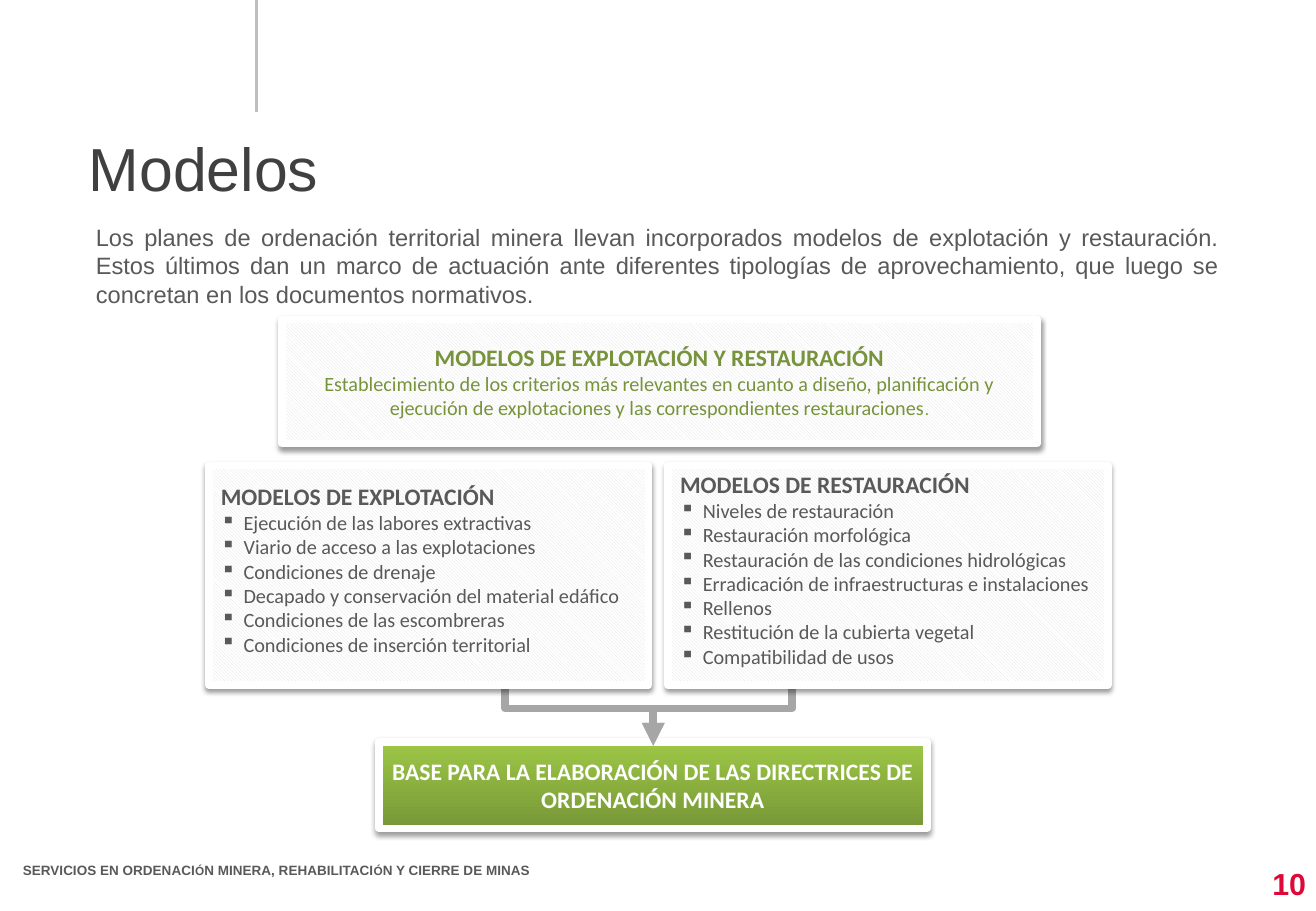
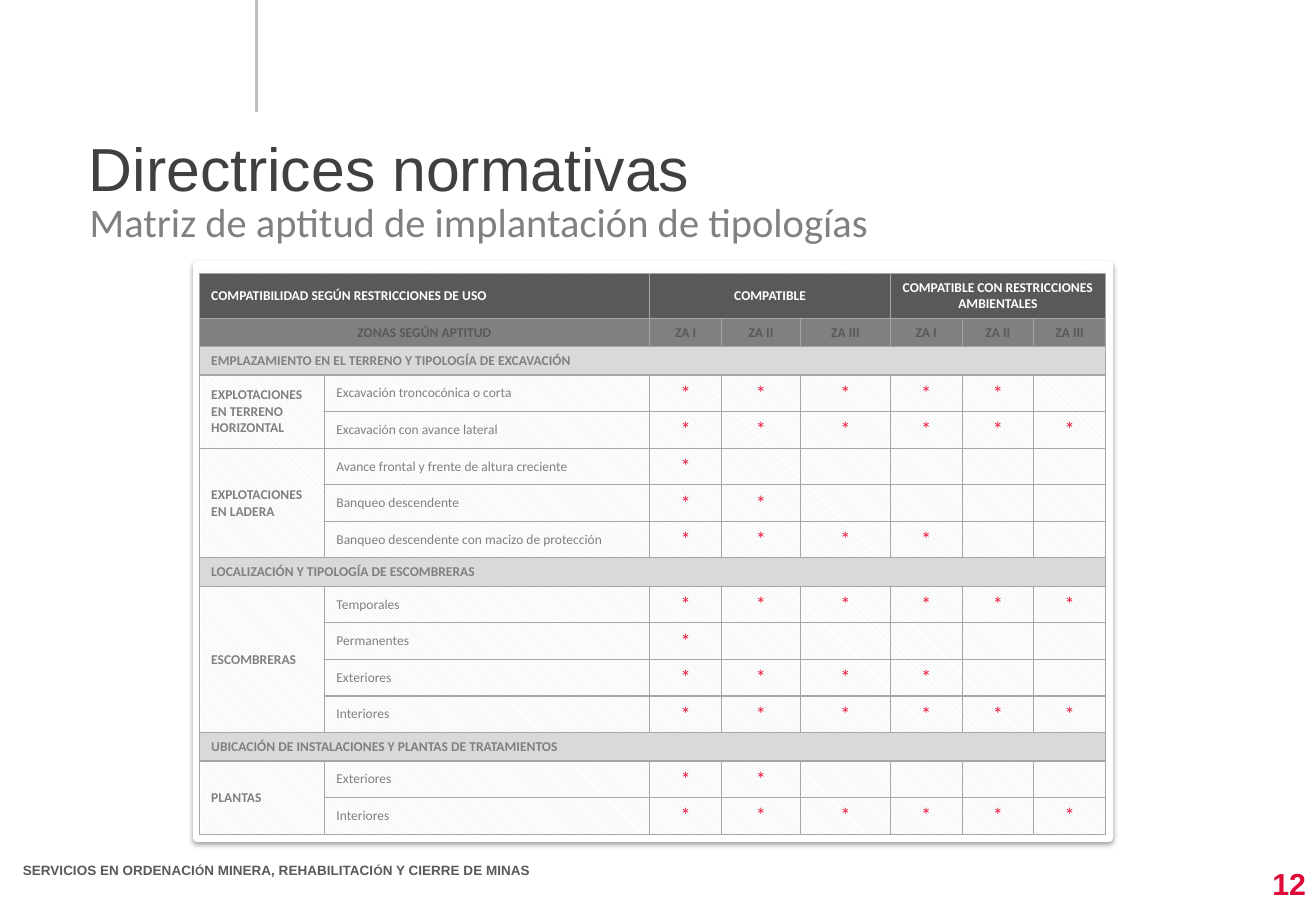
from dataclasses import dataclass, field

from lxml import etree
from pptx import Presentation
from pptx.dml.color import RGBColor
from pptx.enum.dml import MSO_PATTERN
from pptx.enum.shapes import MSO_CONNECTOR, MSO_SHAPE
from pptx.enum.text import MSO_ANCHOR, PP_ALIGN
from pptx.oxml.ns import qn
from pptx.util import Pt

LEFT, CENTER, RIGHT = PP_ALIGN.LEFT, PP_ALIGN.CENTER, PP_ALIGN.RIGHT
JUSTIFY = PP_ALIGN.JUSTIFY
TOP, MIDDLE = MSO_ANCHOR.TOP, MSO_ANCHOR.MIDDLE
HATCH = MSO_PATTERN.LIGHT_DOWNWARD_DIAGONAL
ROUNDED = MSO_SHAPE.ROUNDED_RECTANGLE
STRAIGHT, ELBOW = MSO_CONNECTOR.STRAIGHT, MSO_CONNECTOR.ELBOW

SLIDE_SIZE = 780, 540
BLANK_LAYOUT = 6


def style(font, size, color, bold=False):
    return {"name": font, "size": Pt(size), "bold": bold, "color": color}


@dataclass
class Theme:
    white: str = "FFFFFF"
    black: str = "000000"
    hatch: str = "E2E2E2"
    rule: str = "BFBFBF"
    arrow: str = "A6A6A6"
    dark: str = "595959"
    grey: str = "808080"
    light: str = "D9D9D9"
    gradient: tuple = ("779737", "9DC746")
    text: dict = field(default_factory=lambda: {
        "title": style("Arial", 36, "404040"),
        "subtitle": style("Calibri", 24, "808080"),
        "body": style("Arial", 14, "595959"),
        "footer": style("Arial", 8, "595959", True),
        "footer accent": style("Arial", 7, "595959", True),
        "number": style("Arial", 18, "DD0939", True),
        "green heading": style("Calibri", 14, "77933C", True),
        "green": style("Calibri", 12, "77933C"),
        "green stop": style("Calibri", 10, "77933C"),
        "heading": style("Calibri", 14, "595959", True),
        "item": style("Calibri", 12, "595959"),
        "base": style("Calibri", 14, "FFFFFF", True),
        "head cell": style("Calibri", 8, "FFFFFF", True),
        "zone cell": style("Calibri", 8, "595959", True),
        "group cell": style("Calibri", 8, "808080", True),
        "cell": style("Calibri", 8, "808080"),
        "mark": style("Calibri", 12, "EC1C3F"),
    })


@dataclass
class Para:
    """A paragraph: spans are (text, style name) pairs."""
    spans: list
    align: object = LEFT
    bullet: bool = False
    line_spacing: object = None


def child(parent, tag, **attributes):
    return etree.SubElement(parent, qn(tag), attributes)


def solid(parent, color):
    return child(child(parent, "a:solidFill"), "a:srgbClr", val=color)


class Builder:
    def __init__(self):
        self.theme = Theme()
        self.deck = Presentation()
        self.deck.slide_width, self.deck.slide_height = map(Pt, SLIDE_SIZE)
        self.page = None

    def new_page(self, title, number):
        """Start a slide with the shared rule, footer, title and number."""
        layout = self.deck.slide_layouts[BLANK_LAYOUT]
        self.page = self.deck.slides.add_slide(layout)
        footer = [("SERVICIOS EN ORDENACI", "footer"), ("Ó", "footer accent"),
                  ("N MINERA, REHABILITACI", "footer"), ("Ó", "footer accent"),
                  ("N Y CIERRE DE MINAS", "footer")]
        self.text((6.5, 508.3, 457, 19.4), [Para(footer, line_spacing=0.9)])
        rule = self.connector(STRAIGHT, 152, 0, 152, 66.2)
        rule.line.color.rgb = RGBColor.from_string(self.theme.rule)
        rule.line.width = Pt(1.5)
        self.text((52.6, 71.3, 680.4, 55.4), [Para([(title, "title")])],
                  anchor=MIDDLE, insets=(0, 0, 0, 0))
        self.text((718.6, 509.8, 62.6, 28),
                  [Para([(str(number), "number")], RIGHT)], anchor=MIDDLE)

    def fill_frame(self, frame, paras, anchor=TOP, insets=(7.2, 3.6, 7.2, 3.6)):
        sides = ("margin_left", "margin_top", "margin_right", "margin_bottom")
        settings = dict(zip(sides, map(Pt, insets)))
        settings.update(word_wrap=True, vertical_anchor=anchor)
        for name, value in settings.items():
            setattr(frame, name, value)
        for index, para in enumerate(paras):
            target = frame.add_paragraph() if index else frame.paragraphs[0]
            self.fill_paragraph(target, para)

    def fill_paragraph(self, target, para):
        target.alignment = para.align
        if para.line_spacing:
            target.line_spacing = para.line_spacing
        if para.bullet:
            properties = target._p.get_or_add_pPr()
            properties.set("marL", str(Pt(13.5)))
            properties.set("indent", str(-Pt(13.5)))
            child(properties, "a:buChar", char="▪")
        for text, style_name in para.spans:
            span = target.add_run()
            span.text = text
            for name, value in self.theme.text[style_name].items():
                if name == "color":
                    span.font.color.rgb = RGBColor.from_string(value)
                else:
                    setattr(span.font, name, value)

    def text(self, area, paras, **frame_format):
        box = self.page.shapes.add_textbox(*map(Pt, area))
        self.fill_frame(box.text_frame, paras, **frame_format)

    def card(self, area, paras=(), gradient=False, **frame_format):
        box = self.page.shapes.add_shape(ROUNDED, *map(Pt, area))
        box.adjustments[0] = 0
        if gradient:
            box.fill.gradient()
            box.fill.gradient_angle = 90
            for stop, color in zip(box.fill.gradient_stops, self.theme.gradient):
                stop.color.rgb = RGBColor.from_string(color)
        else:
            box.fill.patterned()
            box.fill.pattern = HATCH
            box.fill.fore_color.rgb = RGBColor.from_string(self.theme.hatch)
            box.fill.back_color.rgb = RGBColor.from_string(self.theme.white)
        box.line.color.rgb = RGBColor.from_string(self.theme.white)
        box.line.width = Pt(4.5)
        box.shadow.inherit = False
        effects = box._element.spPr.find(qn("a:effectLst"))
        shadow = child(effects, "a:outerShdw", blurRad=str(Pt(3.1)),
                       dist=str(Pt(1.7)), dir="5400000", rotWithShape="0")
        color = child(shadow, "a:srgbClr", val=self.theme.black)
        child(color, "a:alpha", val="38000")
        self.fill_frame(box.text_frame, paras, anchor=MIDDLE, **frame_format)

    def connector(self, kind, *ends):
        line = self.page.shapes.add_connector(kind, *map(Pt, ends))
        child(line._element.spPr, "a:effectLst")
        return line

    def elbow_arrow(self, start, end):
        """Draw an arrow that leaves downwards, runs sideways, ends downwards."""
        across, down = end[0] - start[0], end[1] - start[1]
        middle_x, middle_y = start[0] + across / 2, start[1] + down / 2
        half_width, half_height = down / 2, abs(across) / 2
        arrow = self.connector(
            ELBOW, middle_x - half_width, middle_y - half_height,
            middle_x + half_width, middle_y + half_height)
        frame = arrow._element.spPr.find(qn("a:xfrm"))
        frame.set("rot", "16200000" if across > 0 else "5400000")
        if across > 0:
            frame.set("flipH", "1")
        arrow.line.color.rgb = RGBColor.from_string(self.theme.arrow)
        arrow.line.width = Pt(4.5)
        child(arrow.line._get_or_add_ln(), "a:tailEnd", type="triangle")

    def table(self, left, top, widths, heights):
        box = self.page.shapes.add_table(
            len(heights), len(widths), Pt(left), Pt(top),
            Pt(sum(widths)), Pt(sum(heights)))
        table = box.table
        table.first_row = table.horz_banding = False
        for column, width in zip(table.columns, widths):
            column.width = Pt(width)
        for row, height in zip(table.rows, heights):
            row.height = Pt(height)
        for cell in table.iter_cells():
            properties = cell._tc.get_or_add_tcPr()
            for side in ("a:lnL", "a:lnR", "a:lnT", "a:lnB"):
                solid(child(properties, side, w=str(Pt(0.75))), self.theme.arrow)
            cell.fill.background()
        return table

    def cell(self, table, row, column, text, style_name, align=LEFT,
             fill=None, span=(1, 1)):
        cell = table.cell(row, column)
        if span != (1, 1):
            cell.merge(table.cell(row + span[0] - 1, column + span[1] - 1))
        if fill:
            cell.fill.solid()
            cell.fill.fore_color.rgb = RGBColor.from_string(fill)
        cell.vertical_anchor = MIDDLE
        self.fill_paragraph(cell.text_frame.paragraphs[0],
                            Para([(text, style_name)], align))

    def shrink_blank_cells(self, table):
        """Keep the default text size of blank cells from stretching rows."""
        for cell in table.iter_cells():
            if not cell.text_frame.text:
                child(cell.text_frame.paragraphs[0]._p, "a:endParaRPr", sz="800")


MODELS = [
    ("MODELOS DE EXPLOTACIÓN", [
        "Ejecución de las labores extractivas",
        "Viario de acceso a las explotaciones",
        "Condiciones de drenaje",
        "Decapado y conservación del material edáfico",
        "Condiciones de las escombreras",
        "Condiciones de inserción territorial"]),
    ("MODELOS DE RESTAURACIÓN", [
        "Niveles de restauración",
        "Restauración morfológica",
        "Restauración de las condiciones hidrológicas",
        "Erradicación de infraestructuras e instalaciones",
        "Rellenos",
        "Restitución de la cubierta vegetal",
        "Compatibilidad de usos"]),
]

# Each typology carries the number of zones marked, counted from the left.
MATRIX = [
    ("EMPLAZAMIENTO EN EL TERRENO Y TIPOLOGÍA DE EXCAVACIÓN", [
        ("EXPLOTACIONES EN TERRENO HORIZONTAL", [
            ("Excavación troncocónica o corta", 5),
            ("Excavación con avance lateral", 6)]),
        ("EXPLOTACIONES EN LADERA", [
            ("Avance frontal y frente de altura creciente", 1),
            ("Banqueo descendente", 2),
            ("Banqueo descendente con macizo de protección", 4)])]),
    ("LOCALIZACIÓN Y TIPOLOGÍA DE ESCOMBRERAS", [
        ("ESCOMBRERAS", [("Temporales", 6), ("Permanentes", 1),
                         ("Exteriores", 4), ("Interiores", 6)])]),
    ("UBICACIÓN DE INSTALACIONES Y PLANTAS DE TRATAMIENTOS", [
        ("PLANTAS", [("Exteriores", 2), ("Interiores", 6)])]),
]


def models_page(builder):
    builder.new_page("Modelos", 10)
    intro = ("Los planes de ordenación territorial minera llevan incorporados "
             "modelos de explotación y restauración. Estos últimos dan un marco "
             "de actuación ante diferentes tipologías de aprovechamiento, que "
             "luego se concretan en los documentos normativos.")
    builder.text((49.7, 128.2, 680.4, 74.9),
                 [Para([(intro, "body")], JUSTIFY, line_spacing=Pt(17))])
    criteria = ("Establecimiento de los criterios más relevantes en cuanto a "
                "diseño, planificación y ejecución de explotaciones y las "
                "correspondientes restauraciones")
    builder.card((167, 189.4, 447.8, 73.4), [
        Para([("MODELOS DE EXPLOTACIÓN Y RESTAURACIÓN", "green heading")], CENTER),
        Para([(criteria, "green"), (".", "green stop")], CENTER)])
    builder.card((224.6, 439.9, 324.7, 51.1), [
        Para([("BASE PARA LA ELABORACIÓN DE LAS DIRECTRICES DE "
               "ORDENACIÓN MINERA", "base")], CENTER)], gradient=True)
    for start_x in (299.5, 469.5):
        builder.elbow_arrow((start_x, 398), (387.2, 442))
    for index, (heading, items) in enumerate(MODELS):
        paras = [Para([(heading, "heading")])]
        paras += [Para([(item, "item")], bullet=True) for item in items]
        builder.card((123.8 + index * 272.2, 275.8, 260.6, 130.3), paras,
                     insets=(7.2, 0, 7.2, 7.2))


def matrix_page(builder):
    theme = builder.theme
    builder.new_page("Directrices normativas", 12)
    builder.card((116.6, 157, 540.7, 339.8))
    builder.text((46.1, 113, 680.4, 36), [
        Para([("Matriz de aptitud de implantación de tipologías", "subtitle")])])
    heights = [26.7, 16.7]
    for _, groups in MATRIX:
        heights += [16.7] + [21.7] * sum(len(rows) for _, rows in groups)
    widths = [74.2, 193, 42.5, 46.8, 53.3, 42.5, 42.5, 42.5]
    table = builder.table(118, 162, widths, heights)

    heads = [(0, 2, "COMPATIBILIDAD SEGÚN RESTRICCIONES DE USO", LEFT),
             (2, 3, "COMPATIBLE", CENTER),
             (5, 3, "COMPATIBLE CON RESTRICCIONES AMBIENTALES", CENTER)]
    for column, count, text, align in heads:
        builder.cell(table, 0, column, text, "head cell", align,
                     theme.dark, (1, count))
    builder.cell(table, 1, 0, "ZONAS SEGÚN APTITUD", "zone cell", CENTER,
                 theme.grey, (1, 2))
    for column, zone in enumerate(["ZA I", "ZA II", "ZA III"] * 2, start=2):
        builder.cell(table, 1, column, zone, "zone cell", CENTER, theme.grey)

    row = 2
    for section, groups in MATRIX:
        builder.cell(table, row, 0, section, "group cell", fill=theme.light,
                     span=(1, len(widths)))
        row += 1
        for group, typologies in groups:
            builder.cell(table, row, 0, group, "group cell",
                         span=(len(typologies), 1))
            for typology, marks in typologies:
                builder.cell(table, row, 1, typology, "cell")
                for column in range(2, 2 + marks):
                    builder.cell(table, row, column, "*", "mark", CENTER)
                row += 1
    builder.shrink_blank_cells(table)


def main():
    builder = Builder()
    models_page(builder)
    matrix_page(builder)
    builder.deck.save("out.pptx")


if __name__ == "__main__":
    main()
